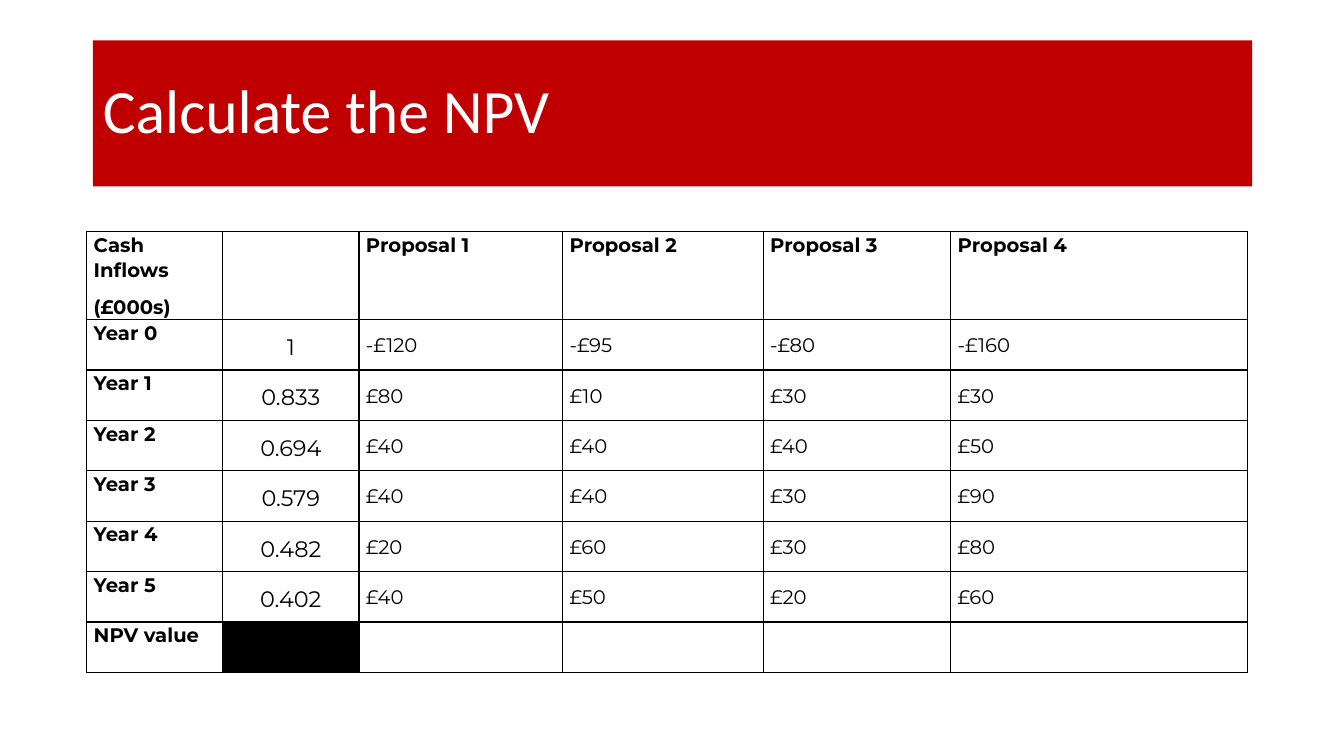
from lxml.etree import SubElement
from pptx import Presentation
from pptx.dml.color import RGBColor
from pptx.enum.text import MSO_ANCHOR, PP_ALIGN
from pptx.oxml.ns import qn
from pptx.util import Emu, Pt

EMU_PER_PX = 9144
COLOURS = {"banner": "C00000", "paper": "FFFFFF", "ink": "000000"}

LABEL = dict(size=14, bold=True, align=PP_ALIGN.LEFT, anchor=MSO_ANCHOR.TOP,
             line=1.07, after=8, insets=(7, 0, 7, 0))
AMOUNT = {**LABEL, "bold": False, "anchor": MSO_ANCHOR.MIDDLE}
FACTOR = {**AMOUNT, "size": 16, "align": PP_ALIGN.CENTER,
          "line": 1.15, "after": 10, "insets": (1, 1, 1, 0)}
TOTAL = {**LABEL, "after": 0}

PROPOSALS = ["Proposal 1", "Proposal 2", "Proposal 3", "Proposal 4"]
DISCOUNT_FACTORS = ["1", "0.833", "0.694", "0.579", "0.482", "0.402"]
CASH_FLOWS = [
    ["-£120", "-£95", "-£80", "-£160"],
    ["£80", "£10", "£30", "£30"],
    ["£40", "£40", "£40", "£50"],
    ["£40", "£40", "£30", "£90"],
    ["£20", "£60", "£30", "£80"],
    ["£40", "£50", "£20", "£60"],
]
COLUMN_WIDTHS = [135, 135, 202, 199, 186, 294]
ROW_HEIGHTS = [83] + [50] * 7


def px(length):
    return Emu(length * EMU_PER_PX)


def colour(name):
    return RGBColor.from_string(COLOURS[name])


class SlideBuilder:
    def __init__(self, presentation):
        self.slide = presentation.slides.add_slide(presentation.slide_layouts[5])
        self.title_font = "Calibri"
        self.table_font = "Montserrat"

    def add_run(self, paragraph, words, font, size, ink, bold=False):
        run = paragraph.add_run()
        run.text = words
        run.font.name = font
        run.font.size = Pt(size)
        run.font.bold = bold
        run.font.color.rgb = colour(ink)

    def title(self, words, left, top, width, height):
        banner = self.slide.shapes.title
        banner.left, banner.top = px(left), px(top)
        banner.width, banner.height = px(width), px(height)
        banner.fill.solid()
        banner.fill.fore_color.rgb = colour("banner")
        banner.text_frame.vertical_anchor = MSO_ANCHOR.MIDDLE
        heading = banner.text_frame.paragraphs[0]
        heading.alignment = PP_ALIGN.LEFT
        heading.line_spacing = 0.9
        self.add_run(heading, words, self.title_font, 44, "paper")

    def table(self, left, top, widths, heights):
        grid = self.slide.shapes.add_table(
            len(heights), len(widths), px(left), px(top),
            px(sum(widths)), px(sum(heights))).table
        grid.first_row = False
        grid.horz_banding = False
        for column, width in zip(grid.columns, widths):
            column.width = px(width)
        for row, height in zip(grid.rows, heights):
            row.height = px(height)
        for cell in grid.iter_cells():
            self.border(cell)
            self.shade(cell, "paper")
        return grid

    def border(self, cell):
        properties = cell._tc.get_or_add_tcPr()
        for side in ("a:lnL", "a:lnR", "a:lnT", "a:lnB"):
            edge = SubElement(properties, qn(side), w=str(Pt(1)))
            fill = SubElement(edge, qn("a:solidFill"))
            SubElement(fill, qn("a:srgbClr"), val=COLOURS["ink"])

    def shade(self, cell, fill):
        cell.fill.solid()
        cell.fill.fore_color.rgb = colour(fill)

    def cell_text(self, cell, lines, style):
        (cell.margin_left, cell.margin_top,
         cell.margin_right, cell.margin_bottom) = map(px, style["insets"])
        cell.vertical_anchor = style["anchor"]
        for index, words in enumerate(lines):
            frame = cell.text_frame
            paragraph = frame.add_paragraph() if index else frame.paragraphs[0]
            paragraph.alignment = style["align"]
            paragraph.line_spacing = style["line"]
            paragraph.space_after = Pt(style["after"])
            self.add_run(paragraph, words, self.table_font,
                         style["size"], "ink", style["bold"])


def main():
    presentation = Presentation()
    presentation.slide_width, presentation.slide_height = px(1333), px(750)
    builder = SlideBuilder(presentation)
    builder.title("Calculate the NPV", 92, 40, 1150, 145)

    npv = builder.table(86, 230, COLUMN_WIDTHS, ROW_HEIGHTS)
    builder.cell_text(npv.cell(0, 0), ["Cash Inflows", "(£000s)"], LABEL)
    for column, proposal in enumerate(PROPOSALS, start=2):
        builder.cell_text(npv.cell(0, column), [proposal], LABEL)
    for year, (factor, flows) in enumerate(zip(DISCOUNT_FACTORS, CASH_FLOWS)):
        row = year + 1
        builder.cell_text(npv.cell(row, 0), [f"Year {year}"], LABEL)
        builder.cell_text(npv.cell(row, 1), [factor], FACTOR)
        for column, flow in enumerate(flows, start=2):
            builder.cell_text(npv.cell(row, column), [flow], AMOUNT)
    builder.cell_text(npv.cell(7, 0), ["NPV value"], TOTAL)
    builder.shade(npv.cell(7, 1), "ink")

    presentation.save("out.pptx")


if __name__ == "__main__":
    main()
